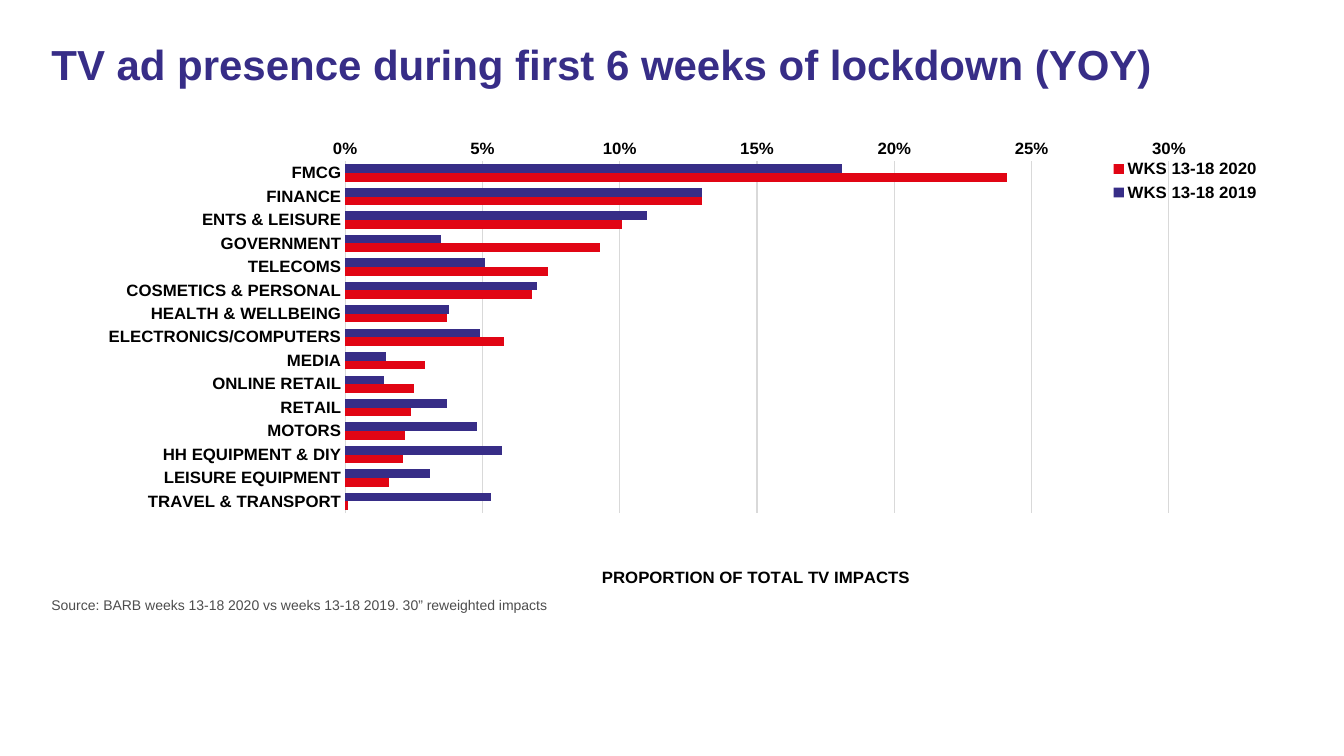
from lxml.etree import SubElement
from pptx import Presentation
from pptx.chart.data import CategoryChartData
from pptx.dml.color import RGBColor
from pptx.enum.chart import (XL_AXIS_CROSSES as Crosses, XL_CHART_TYPE as ChartType,
                             XL_LEGEND_POSITION as LegendPosition, XL_TICK_MARK as TickMark)
from pptx.enum.text import MSO_ANCHOR as Anchor, PP_ALIGN as Align
from pptx.oxml import parse_xml
from pptx.oxml.ns import nsdecls, qn
from pptx.util import Pt

INDIGO = RGBColor(0x37, 0x2D, 0x87)
RED = RGBColor(0xE1, 0x05, 0x14)
BLACK = RGBColor(0, 0, 0)
DARK_GREY = RGBColor(0x4D, 0x4D, 0x4D)
LIGHT_GREY = RGBColor(0xD9, 0xD9, 0xD9)

LEFT, WIDTH = 29.5, 893

# Sector: share in 2019, share in 2020
IMPACTS = {
    "FMCG": (0.181, 0.241),
    "FINANCE": (0.13, 0.13),
    "ENTS & LEISURE": (0.11, 0.101),
    "GOVERNMENT": (0.035, 0.093),
    "TELECOMS": (0.051, 0.074),
    "COSMETICS & PERSONAL": (0.07, 0.068),
    "HEALTH & WELLBEING": (0.038, 0.037),
    "ELECTRONICS/COMPUTERS": (0.049, 0.058),
    "MEDIA": (0.015, 0.029),
    "ONLINE RETAIL": (0.014, 0.025),
    "RETAIL": (0.037, 0.024),
    "MOTORS": (0.048, 0.022),
    "HH EQUIPMENT & DIY": (0.057, 0.021),
    "LEISURE EQUIPMENT": (0.031, 0.016),
    "TRAVEL & TRANSPORT": (0.053, 0.001),
}
SERIES = {"WKS 13-18 2019": INDIGO, "WKS 13-18 2020": RED}


def format_font(font, size, color, bold=False, name="Arial"):
    font.name, font.size, font.bold = name, Pt(size), bold
    font.color.rgb = color


def write_text(frame, text, line_spacing=1.0, **font_format):
    frame.text = text
    paragraph = frame.paragraphs[0]
    properties = paragraph._p.get_or_add_pPr()
    properties.set("marL", "0")
    properties.set("indent", "0")
    SubElement(properties, qn("a:buNone"))
    paragraph.alignment = Align.LEFT
    paragraph.line_spacing = line_spacing
    paragraph.space_before = Pt(0)
    format_font(paragraph.runs[0].font, **font_format)


def place_part(element, index, target="", **fractions):
    """Give a chart part a manual layout in fractions of the chart."""
    former = element.find(qn("c:layout"))
    if former is not None:
        element.remove(former)
    layout = parse_xml(f"<c:layout {nsdecls('c')}><c:manualLayout/></c:layout>")
    settings = {"layoutTarget": target} if target else {}
    settings.update(xMode="edge", yMode="edge", **fractions)
    for tag, value in settings.items():
        SubElement(layout[0], qn(f"c:{tag}")).set("val", str(value))
    element.insert(index, layout)


class SlideBuilder:
    def __init__(self, presentation):
        self.slide = presentation.slides.add_slide(presentation.slide_layouts[1])
        self.label_format = dict(size=12, color=BLACK, bold=True)

    def placeholder(self, index, top, height, text, **text_format):
        shape = self.slide.placeholders[index]
        shape.left, shape.top = Pt(LEFT), Pt(top)
        shape.width, shape.height = Pt(WIDTH), Pt(height)
        frame = shape.text_frame
        frame.word_wrap = True
        frame.vertical_anchor = Anchor.TOP
        write_text(frame, text, **text_format)

    def axis(self, axis):
        axis.major_tick_mark = axis.minor_tick_mark = TickMark.NONE
        format_font(axis.tick_labels.font, **self.label_format)

    def bar_chart(self, top, height, axis_title):
        data = CategoryChartData(number_format="0%")
        data.categories = IMPACTS
        for name, values in zip(SERIES, zip(*IMPACTS.values())):
            data.add_series(name, values)
        chart = self.slide.shapes.add_chart(
            ChartType.BAR_CLUSTERED, Pt(LEFT), Pt(top), Pt(WIDTH), Pt(height), data).chart
        chart.has_title = False
        format_font(chart.font, 10, BLACK)

        # Bars
        plot = chart.plots[0]
        plot.gap_width, plot.overlap = 72, 0
        plot.vary_by_categories = False
        for series, color in zip(plot.series, SERIES.values()):
            series.format.fill.solid()
            series.format.fill.fore_color.rgb = color
        place_part(chart._chartSpace.chart.plotArea, 0, "inner",
                   x=0.243, y=0.036, w=0.659, h=0.796)

        # Sectors run downwards, with the percentages at the foot
        sectors = chart.category_axis
        self.axis(sectors)
        sectors.reverse_order = True
        sectors.crosses = Crosses.MAXIMUM
        shares = chart.value_axis
        self.axis(shares)
        shares.minimum_scale, shares.maximum_scale, shares.major_unit = 0, 0.3, 0.05
        shares.tick_labels.number_format = "0%"
        shares.tick_labels.number_format_is_linked = False
        shares.format.line.fill.background()
        shares.has_major_gridlines = True
        for line in (sectors.format.line, shares.major_gridlines.format.line):
            line.color.rgb, line.width = LIGHT_GREY, Pt(0.75)

        # Axis title
        title = shares.axis_title
        title.text_frame.text = axis_title
        format_font(title.text_frame.paragraphs[0].runs[0].font, **self.label_format)
        place_part(title._element, 1, x=0.446, y=0.947)

        # Legend
        chart.has_legend = True
        legend = chart.legend
        legend.position = LegendPosition.BOTTOM
        legend.include_in_layout = False
        format_font(legend.font, **self.label_format)
        place_part(legend._element, 1, x=0.85, y=0.02, w=0.13, h=0.12)


def main():
    presentation = Presentation()
    presentation.slide_width, presentation.slide_height = Pt(960), Pt(540)
    builder = SlideBuilder(presentation)
    builder.placeholder(0, 28, 80.5, "TV ad presence during first 6 weeks of lockdown (YOY)",
                        line_spacing=0.9, size=30, color=INDIGO, bold=True)
    builder.placeholder(1, 422.5, 24,
                        "Source: BARB weeks 13-18 2020 vs weeks 13-18 2019. 30” reweighted impacts",
                        size=10, color=DARK_GREY)
    builder.bar_chart(100, 322.5, "PROPORTION OF TOTAL TV IMPACTS")
    presentation.save("out.pptx")


if __name__ == "__main__":
    main()
